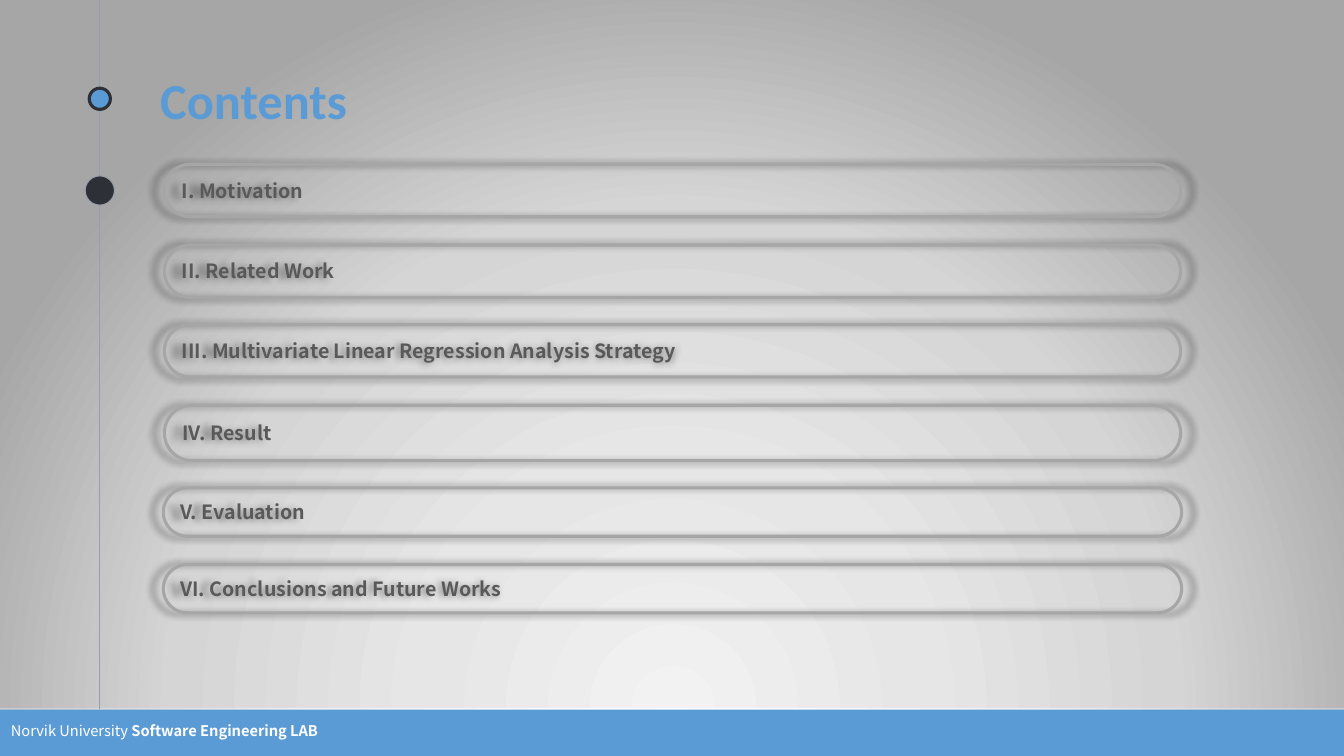
from dataclasses import dataclass

from lxml.etree import SubElement
from pptx import Presentation
from pptx.dml.color import RGBColor
from pptx.enum.shapes import MSO_CONNECTOR, MSO_SHAPE
from pptx.enum.text import MSO_ANCHOR, PP_ALIGN
from pptx.oxml.ns import qn
from pptx.util import Inches, Pt

BLUE, DARK, RAIL_GRAY, RING_GRAY = "5B9BD5", "2E3037", "999FA9", "A6A6A6"
BODY_FONT = "Noto Sans CJK KR"
RAIL_X = 0.99
PILL_SPAN = 13.34

TITLE_FORMAT = {"name": "Calibri", "size": Pt(36), "bold": True}
CHAPTER_FORMAT = {"name": BODY_FONT, "size": Pt(14), "bold": True}
FOOTER_FORMAT = {"name": BODY_FONT, "size": Pt(10.5)}


@dataclass
class Chapter:
    text: str
    top: float
    width: float
    height: float


@dataclass
class Marker:
    center_y: float
    diameter: float
    fill: str
    line: str
    weight: float


CHAPTERS = [
    Chapter("I. Motivation", 1.63, 10.08, 0.52),
    Chapter("II. Related Work", 2.43, 10.08, 0.52),
    Chapter("III. Multivariate Linear Regression Analysis Strategy", 3.22, 10.08, 0.52),
    Chapter("IV. Result", 4.02, 10.08, 0.55),
    Chapter("V. Evaluation", 4.84, 10.1, 0.48),
    Chapter("VI. Conclusions and Future Works", 5.6, 10.1, 0.48),
]
MARKERS = [
    Marker(0.98, 0.21, BLUE, DARK, 2.25),
    Marker(1.89, 0.29, DARK, RAIL_GRAY, 0.75),
]
BACKDROP_STOPS = {0: "FFFFFF", 46: "F2F2F2", 100: "BFBFBF"}
PANEL_STOPS = {0: "F2F2F2", 33: "E6E6E6", 66: "D5D5D5", 100: "A6A6A6"}


def rgb(value: str) -> RGBColor:
    return RGBColor.from_string(value)


def add_radial_gradient(fill, element, stops: dict[int, str]) -> None:
    fill.gradient()
    gradient = next(element.iter(qn("a:gradFill")))
    gradient.clear()
    stop_list = SubElement(gradient, qn("a:gsLst"))
    for position, value in stops.items():
        stop = SubElement(stop_list, qn("a:gs"), pos=str(position * 1000))
        SubElement(stop, qn("a:srgbClr"), val=value)
    circle = SubElement(gradient, qn("a:path"), path="circle")
    SubElement(circle, qn("a:fillToRect"), l="50000", t="130000", r="50000", b="-30000")


def add_run(paragraph, text: str, color: str, text_format: dict) -> None:
    run = paragraph.add_run()
    run.text = text
    run.font.color.rgb = rgb(color)
    for name, value in text_format.items():
        setattr(run.font, name, value)


def add_plain_shape(slide, preset, left: float, top: float, width: float, height: float):
    shape = slide.shapes.add_shape(
        preset, Inches(left), Inches(top), Inches(width), Inches(height))
    shape.shadow.inherit = False
    shape.line.fill.background()
    return shape


def set_outline(shape, color: str, weight: float) -> None:
    shape.line.color.rgb = rgb(color)
    shape.line.width = Pt(weight)


def add_footer(slide) -> None:
    band = add_plain_shape(slide, MSO_SHAPE.RECTANGLE, 0, 7.04, 13.33, 0.46)
    band.fill.solid()
    band.fill.fore_color.rgb = rgb(BLUE)
    affiliation = slide.shapes.add_textbox(
        Inches(0.01), Inches(7.11), Inches(3.28), Inches(0.28))
    affiliation.text_frame.word_wrap = True
    paragraph = affiliation.text_frame.paragraphs[0]
    add_run(paragraph, "Norvik University ", "FFFFFF", FOOTER_FORMAT)
    add_run(paragraph, "Software Engineering LAB", "FFFFFF", FOOTER_FORMAT | {"bold": True})


def add_rail(slide) -> None:
    rail = slide.shapes.add_connector(
        MSO_CONNECTOR.STRAIGHT, Inches(RAIL_X), Inches(0), Inches(RAIL_X), Inches(7.03))
    set_outline(rail, RAIL_GRAY, 0.75)
    SubElement(rail.element.spPr, qn("a:effectLst"))


def add_marker(slide, marker: Marker) -> None:
    radius = marker.diameter / 2
    dot = add_plain_shape(slide, MSO_SHAPE.OVAL, RAIL_X - radius,
                          marker.center_y - radius, marker.diameter, marker.diameter)
    dot.fill.solid()
    dot.fill.fore_color.rgb = rgb(marker.fill)
    set_outline(dot, marker.line, marker.weight)


def add_title(slide) -> None:
    title = slide.shapes.add_textbox(
        Inches(1.49), Inches(0.48), Inches(11.48), Inches(0.91))
    frame = title.text_frame
    frame_format = {"word_wrap": True, "vertical_anchor": MSO_ANCHOR.BOTTOM}
    frame_format |= {f"margin_{side}": Inches(0.1)
                     for side in ("left", "top", "right", "bottom")}
    for name, value in frame_format.items():
        setattr(frame, name, value)
    frame.paragraphs[0].line_spacing = 0.9
    add_run(frame.paragraphs[0], "Contents", BLUE, TITLE_FORMAT)


def add_chapter(slide, chapter: Chapter) -> None:
    pill = add_plain_shape(slide, MSO_SHAPE.ROUNDED_RECTANGLE,
                           (PILL_SPAN - chapter.width) / 2, chapter.top,
                           chapter.width, chapter.height)
    pill.adjustments[0] = 0.5
    pill.fill.background()
    set_outline(pill, RING_GRAY, 2.25)
    effects = pill.element.spPr.find(qn("a:effectLst"))
    shadow = SubElement(effects, qn("a:outerShdw"), blurRad=str(Pt(5)),
                        sx="102000", sy="102000", algn="ctr", rotWithShape="0")
    shade = SubElement(shadow, qn("a:srgbClr"), val="000000")
    SubElement(shade, qn("a:alpha"), val="40000")
    pill.text_frame.word_wrap = True
    pill.text_frame.vertical_anchor = MSO_ANCHOR.MIDDLE
    paragraph = pill.text_frame.paragraphs[0]
    paragraph.alignment = PP_ALIGN.LEFT
    add_run(paragraph, chapter.text, "595959", CHAPTER_FORMAT)


def main() -> None:
    deck = Presentation()
    deck.slide_width, deck.slide_height = Inches(13.33), Inches(7.5)
    slide = deck.slides.add_slide(deck.slide_layouts[6])
    add_radial_gradient(slide.background.fill, slide.element, BACKDROP_STOPS)
    add_footer(slide)
    panel = add_plain_shape(slide, MSO_SHAPE.RECTANGLE, 0, 0, 13.35, 7.02)
    add_radial_gradient(panel.fill, panel.element, PANEL_STOPS)
    add_rail(slide)
    for marker in MARKERS:
        add_marker(slide, marker)
    add_title(slide)
    for chapter in CHAPTERS:
        add_chapter(slide, chapter)
    deck.save("out.pptx")


if __name__ == "__main__":
    main()
